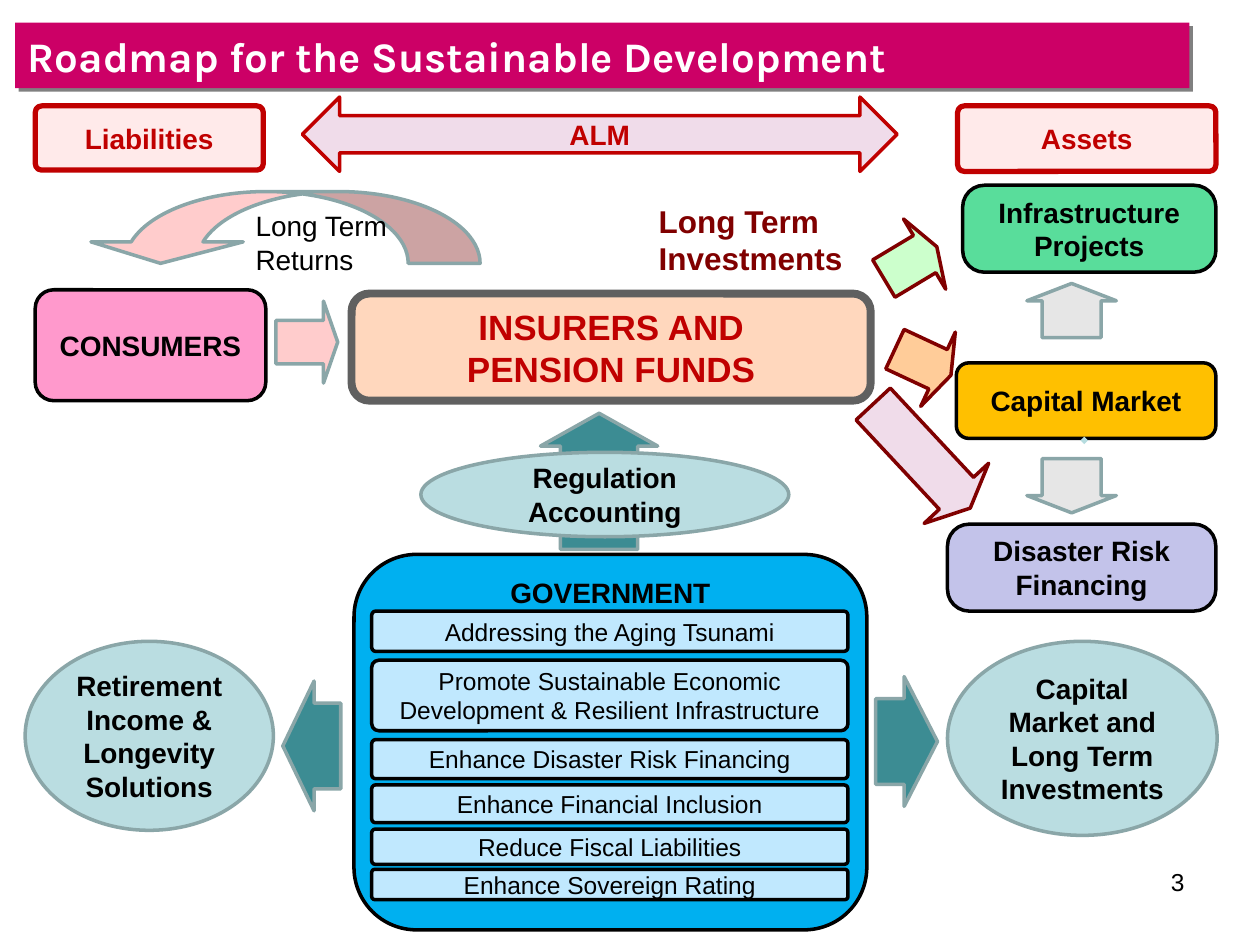
from dataclasses import dataclass

from lxml import etree
from pptx import Presentation
from pptx.dml.color import RGBColor
from pptx.enum.shapes import MSO_CONNECTOR, MSO_SHAPE as SHAPE
from pptx.enum.text import MSO_ANCHOR as ANCHOR, PP_ALIGN as ALIGN
from pptx.oxml import parse_xml
from pptx.oxml.ns import nsdecls, qn
from pptx.util import Inches, Pt


@dataclass(frozen=True)
class Theme:
    title_font: str = "Karla"
    font: str = "Arial"
    title: int = 24
    large: int = 20
    medium: int = 18
    body: int = 16
    small: int = 14
    black: str = "000000"
    white: str = "FFFFFF"
    magenta: str = "CC0066"
    red: str = "C00000"
    maroon: str = "800000"
    dark_grey: str = "606060"
    light_grey: str = "E6E6E6"
    grey_teal: str = "8AA6A8"
    teal: str = "3C8C93"
    pale_teal: str = "BADDE1"
    mark: str = "B6DCDF"
    rose: str = "FFCCCC"
    pink: str = "FF99CC"
    lilac: str = "F0DCEA"
    violet: str = "A3A3E0"
    orange: str = "FF6600"
    peach: str = "FFCC99"
    gold: str = "FFC000"
    green: str = "00CC66"
    mint: str = "CCFFCC"
    blue: str = "00B0F0"
    pale_blue: str = "CCECFF"


T = Theme()
prs = Presentation()
prs.slide_width, prs.slide_height = Inches(10), Inches(7.5)
s = prs.slides.add_slide(prs.slide_layouts[5])


def write(sp, text, size=T.body, color=T.black, bold=True, align=ALIGN.CENTER, font=T.font):
    tf = sp.text_frame
    tf.text = text
    tf.word_wrap = True
    for p in tf.paragraphs:
        p.alignment = align
        for r in p.runs:
            r.font.name, r.font.size, r.font.bold = font, Pt(size), bold
            r.font.color.rgb = RGBColor.from_string(color)


def add_shape(kind, box, fill, line, width=2, alpha=100, adj=(), rot=0):
    sp = s.shapes.add_shape(kind, *map(Inches, box))
    sp.shadow.inherit = False
    sp.rotation = rot
    for i, value in enumerate(adj):
        sp.adjustments[i] = value
    sp.fill.solid()
    sp.fill.fore_color.rgb = RGBColor.from_string(fill)
    if alpha < 100:
        color = sp.fill._xPr.find(".//" + qn("a:srgbClr"))
        etree.SubElement(color, qn("a:alpha"), val=str(alpha * 1000))
    sp.line.color.rgb = RGBColor.from_string(line)
    sp.line.width = Pt(width)
    return sp


# Title bar with a hard shadow
title = s.shapes.title
title.left, title.top, title.width, title.height = map(Inches, (0.12, 0.18, 9.32, 0.52))
title.fill.solid()
title.fill.fore_color.rgb = RGBColor.from_string(T.magenta)
write(title, "Roadmap for the Sustainable Development", T.title, T.white,
      align=ALIGN.LEFT, font=T.title_font)
title.text_frame.vertical_anchor = ANCHOR.MIDDLE
title._element.spPr.append(parse_xml(
    f'<a:effectLst {nsdecls("a")}><a:outerShdw blurRad="0" dist="35921" dir="2700000" '
    'algn="ctr" rotWithShape="0"><a:srgbClr val="808080"/></a:outerShdw></a:effectLst>'))

# Balance sheet headings and the ALM arrow
for text, box in (("Liabilities", (0.28, 0.84, 1.81, 0.51)),
                  ("Assets", (7.6, 0.84, 2.05, 0.52))):
    sp = add_shape(SHAPE.ROUNDED_RECTANGLE, box, T.rose, T.red, 3, 40, [0.1])
    write(sp, text, color=T.red)
alm = add_shape(SHAPE.LEFT_RIGHT_ARROW, (2.4, 0.77, 4.72, 0.59), T.lilac, T.red)
write(alm, "ALM", color=T.red)

# Consumers, insurers and asset classes
consumers = add_shape(SHAPE.ROUNDED_RECTANGLE, (0.28, 2.3, 1.83, 0.88), T.pink, T.black)
write(consumers, "CONSUMERS")
insurers = add_shape(SHAPE.ROUNDED_RECTANGLE, (2.79, 2.33, 4.12, 0.85),
                     T.orange, T.dark_grey, 4.5, 26)
write(insurers, "INSURERS AND\nPENSION FUNDS", T.large, T.red)
market = add_shape(SHAPE.ROUNDED_RECTANGLE, (7.59, 2.88, 2.06, 0.6), T.gold, T.black)
write(market, "Capital Market")
for text, box, fill in (
        ("Infrastructure Projects", (7.64, 1.47, 2.01, 0.69), T.green),
        ("Disaster Risk Financing", (7.52, 4.16, 2.13, 0.69), T.violet)):
    sp = add_shape(SHAPE.ROUNDED_RECTANGLE, box, fill, T.black, alpha=65, adj=[0.25])
    write(sp, text)

# Short mark under the capital market box
mark = s.shapes.add_connector(MSO_CONNECTOR.STRAIGHT, Inches(8.62), Inches(3.48),
                              Inches(8.59), Inches(3.51))
mark.begin_connect(market, 2)
mark.line.color.rgb = RGBColor.from_string(T.mark)
mark.line.width = Pt(3)
etree.SubElement(mark._element.spPr, qn("a:effectLst"))

# Government and its policies
government = add_shape(SHAPE.ROUNDED_RECTANGLE, (2.81, 4.4, 4.07, 2.98), T.blue, T.black)
write(government, "GOVERNMENT")
government.text_frame.vertical_anchor = ANCHOR.TOP
government.text_frame.margin_top = Inches(0.02)
for text, top, height in (
        ("Addressing the Aging Tsunami", 4.85, 0.32),
        ("Promote Sustainable Economic Development & Resilient Infrastructure", 5.24, 0.56),
        ("Enhance Disaster Risk Financing", 5.87, 0.31),
        ("Enhance Financial Inclusion", 6.23, 0.3),
        ("Reduce Fiscal Liabilities", 6.58, 0.28),
        ("Enhance Sovereign Rating", 6.9, 0.24)):
    sp = add_shape(SHAPE.ROUNDED_RECTANGLE, (2.95, top, 3.78, height),
                   T.pale_blue, T.black, alpha=94, adj=[0.1])
    write(sp, text, T.small, bold=False)

# Arrows from the government
for box, head, rot in (((4.29, 3.28, 0.93, 1.08), 0.28, 0),
                       ((6.68, 5.64, 1.03, 0.49), 0.54, 90),
                       ((1.96, 5.69, 1.03, 0.46), 0.54, 270)):
    add_shape(SHAPE.UP_ARROW, box, T.teal, T.grey_teal, adj=[0.66, head], rot=rot)

# Outcome ellipses
for text, box in (
        ("Regulation\vAccounting", (3.34, 3.59, 2.92, 0.67)),
        ("Retirement Income & Longevity Solutions", (0.2, 5.09, 1.97, 1.5)),
        ("Capital Market and Long Term Investments", (7.52, 5.09, 2.14, 1.54))):
    write(add_shape(SHAPE.OVAL, box, T.pale_teal, T.grey_teal), text)

# Arrows between consumers, insurers and assets
for box, fill, line, rot in (
        ((2.19, 2.39, 0.49, 0.65), T.rose, T.grey_teal, 0),
        ((6.98, 1.76, 0.49, 0.65), T.mint, T.maroon, 329),
        ((7.08, 2.55, 0.49, 0.65), T.peach, T.maroon, 25),
        ((6.75, 3.27, 1.13, 0.7), T.lilac, T.maroon, 47)):
    add_shape(SHAPE.RIGHT_ARROW, box, fill, line, adj=[0.53, 0.23], rot=rot)
for top, rot in ((2.25, 0), (3.64, 180)):
    add_shape(SHAPE.UP_ARROW, (8.15, top, 0.71, 0.43), T.light_grey, T.grey_teal,
              adj=[0.66, 0.32], rot=rot)
add_shape(SHAPE.CURVED_UP_ARROW, (0.67, 1.52, 3.14, 0.57), T.rose, T.grey_teal,
          adj=[1.31, 2.12, 0.3], rot=180)

# Flow labels and slide number
for text, box, size, color, bold, align in (
        ("Long Term Returns", (1.93, 1.61, 1.65, 0.64), T.body, T.black, False, ALIGN.LEFT),
        ("Long Term Investments", (5.13, 1.55, 2.07, 0.71), T.medium, T.maroon, True, ALIGN.LEFT),
        ("3", (7.17, 6.83, 2.33, 0.52), T.small, T.black, False, ALIGN.RIGHT)):
    write(s.shapes.add_textbox(*map(Inches, box)), text, size, color, bold, align)

prs.save("out.pptx")
